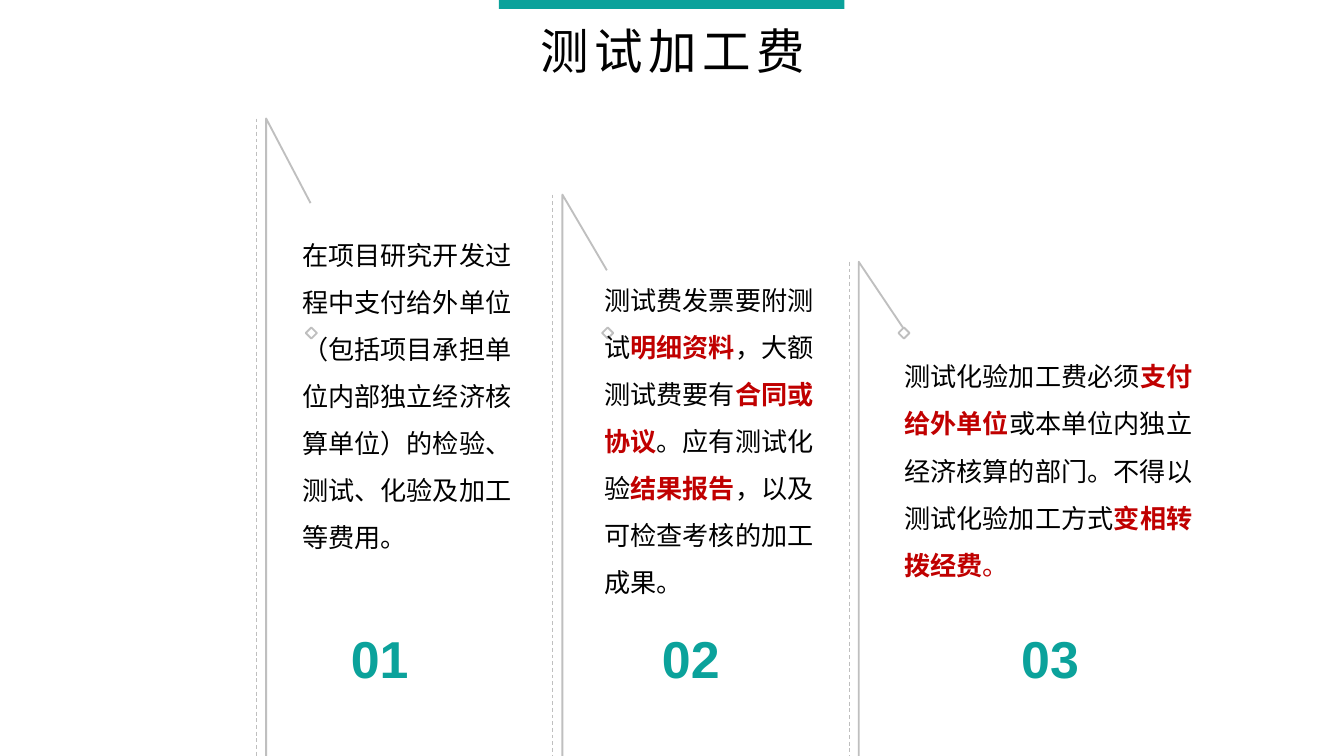
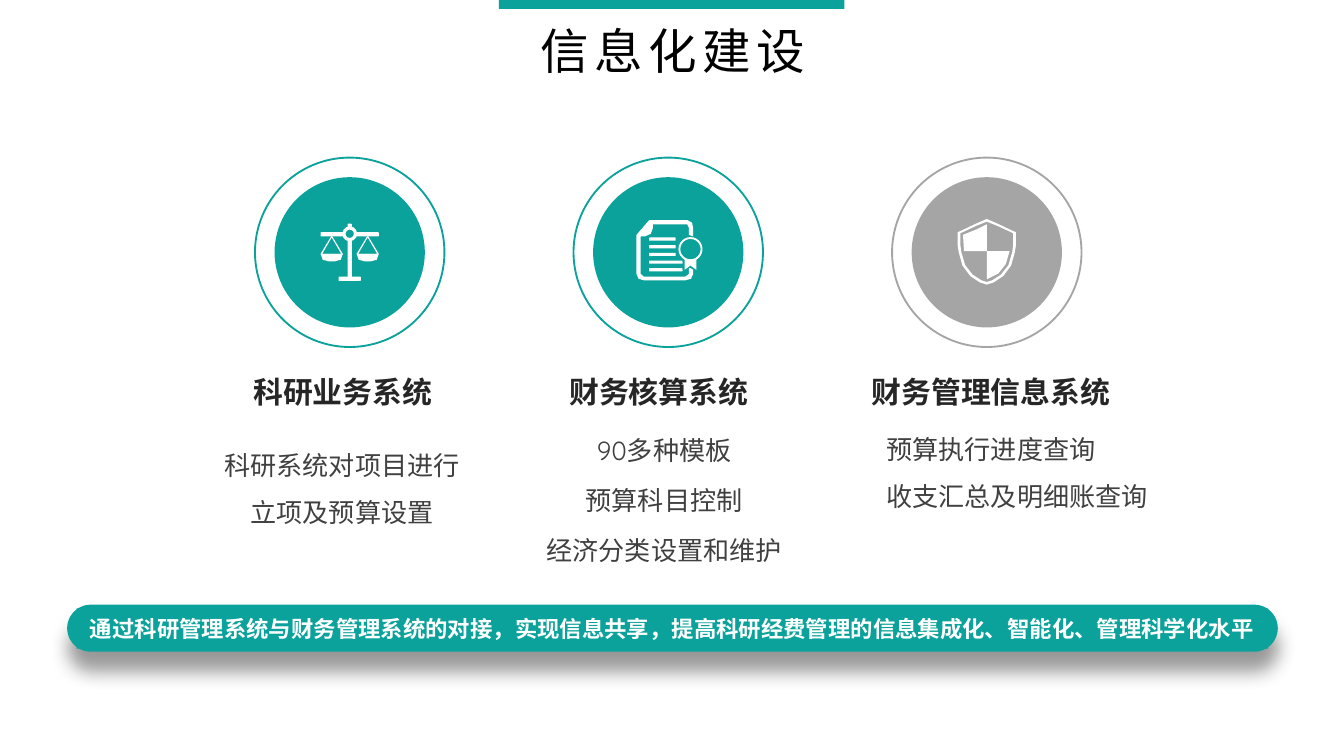
import lxml.etree
import pptx
import pptx.dml.color
import pptx.enum.dml
import pptx.enum.shapes
import pptx.enum.text
import pptx.oxml.ns
import pptx.util

Cm, Pt = pptx.util.Cm, pptx.util.Pt
MSO = pptx.enum.shapes.MSO_SHAPE
ALIGN = pptx.enum.text.PP_ALIGN
qn = pptx.oxml.ns.qn

COLORS = {"teal": "0BA29B", "gray": "A5A5A5", "rule": "BFBFBF", "red": "C00000", "black": "000000",
          "white": "FFFFFF", "heading": "262626", "body": "404040"}
SLIDE_W, SLIDE_H = 25.4, 14.29
CJK, LATIN, DIGITS = "Noto Sans CJK SC", "Quicksand", "Arial"


def rgb(name):
    """Return the named palette colour."""
    return pptx.dml.color.RGBColor.from_string(COLORS[name])


def paint(sp, fill=None, line=None, width=1):
    """Set the fill and line of a shape and drop its shadow."""
    sp.shadow.inherit = False
    if fill:
        sp.fill.solid()
        sp.fill.fore_color.rgb = rgb(fill)
    else:
        sp.fill.background()
    if line:
        sp.line.color.rgb = rgb(line)
        sp.line.width = Pt(width)
    else:
        sp.line.fill.background()
    return sp


def shape(slide, kind, box, **style):
    """Add a preset shape in a box given in centimetres."""
    return paint(slide.shapes.add_shape(kind, *map(Cm, box)), **style)


def disc(slide, cx, cy, radius, **style):
    """Add a circle around a centre."""
    return shape(slide, MSO.OVAL, (cx - radius, cy - radius, 2 * radius, 2 * radius), **style)


def outline(slide, cx, cy, contours, closed=True, **style):
    """Add a freeform whose points are hundredths of a centimetre from a centre."""
    builder = slide.shapes.build_freeform(*contours[0][0], scale=Cm(0.01))
    for i, points in enumerate(contours):
        if i:
            builder.move_to(*points[0])
        builder.add_line_segments(points[1:], close=closed)
    return paint(builder.convert_to_shape(Cm(cx), Cm(cy)), **style)


def style_run(r, size, color, font, bold=False, spacing=0):
    """Format one run, with the Chinese font for East Asian characters."""
    r.font.size, r.font.name, r.font.bold = Pt(size), font, bold
    r.font.color.rgb = rgb(color)
    rPr = r._r.get_or_add_rPr()
    rPr.find(qn("a:latin")).addnext(rPr.makeelement(qn("a:ea"), {"typeface": CJK}))
    if spacing:
        rPr.set("spc", str(spacing * 100))


def fill_text(sp, paragraphs, align=ALIGN.LEFT, leading=None, before=0, wrap=True, **font):
    """Write paragraphs into a shape; parts between asterisks are red and bold."""
    tf = sp.text_frame
    tf.word_wrap = wrap
    for i, words in enumerate(paragraphs):
        p = tf.add_paragraph() if i else tf.paragraphs[0]
        p.alignment = align
        if leading:
            p.line_spacing = leading
        if i and before:
            p.space_before = Pt(before)
        for j, part in enumerate(words.split("*")):
            r = p.add_run()
            r.text = part
            style_run(r, **(dict(font, color="red", bold=True) if j % 2 else font))


def text(slide, box, paragraphs, **style):
    """Add a text box in a box given in centimetres."""
    fill_text(slide.shapes.add_textbox(*map(Cm, box)), paragraphs, **style)


def title_band(slide, box, title):
    """Draw the top bar and the slide title below it."""
    x, y, w, h = box
    shape(slide, MSO.RECTANGLE, (x, y, w, 0.17), fill="teal")
    text(slide, (x + 0.2, y + 0.28, w - 0.36, h - 0.28), [title], align=ALIGN.CENTER,
         size=26, color="black", font=CJK, spacing=3)


def pillar(slide, box, number, number_dx, slant, body_at, body):
    """Draw a bent rule with its dashed twin, diamond, text and number."""
    x, y, w, h = box
    outline(slide, x, y, [[(0, round(h * 100)), (0, 0), (84, slant)]], closed=False, line="rule")
    c = slide.shapes.add_connector(pptx.enum.shapes.MSO_CONNECTOR.STRAIGHT,
                                   Cm(x - 0.18), Cm(y), Cm(x - 0.18), Cm(y + h))
    c.line.color.rgb = rgb("rule")
    c.line.width = Pt(0.5)
    c.line.dash_style = pptx.enum.dml.MSO_LINE.DASH
    lxml.etree.SubElement(c._element.spPr, qn("a:effectLst"))
    shape(slide, MSO.DIAMOND, (x + 0.75, y + h - 8.1, 0.21, 0.21), line="rule")
    text(slide, (x + number_dx, y + h - 2.81, 1.78, 1.68), [number], leading=1.2,
         size=27.8, color="teal", font=DIGITS, bold=True)
    dx, dy, height = body_at
    text(slide, (x + dx, y + dy, w, height), [body], leading=1.5, size=14, color="black", font=CJK)


def mirrored(points):
    """Complete a right half outline with its left half."""
    return points + [(-x, y) for x, y in reversed(points) if x]


def scales_icon(slide, cx, cy):
    """Draw a balance."""
    for x, y, w, h in ((-0.55, -0.38, 1.1, 0.08), (-0.04, -0.54, 0.08, 1.02), (-0.21, 0.46, 0.42, 0.08)):
        shape(slide, MSO.ROUNDED_RECTANGLE, (cx + x, cy + y, w, h), fill="white")
    disc(slide, cx, cy - 0.35, 0.11, fill="teal", line="white", width=1.7)
    pan = [(13, 3), (55, 3), (51, 14), (40, 17), (28, 17), (17, 14)]
    strings = [[(13, 3), (34, -32), (55, 3)], [(16, 3), (34, -28), (52, 3)]]
    for side in (-1, 1):
        for contours in ([pan], strings):
            outline(slide, cx, cy, [[(side * x, y) for x, y in c] for c in contours], fill="white")


def certificate_icon(slide, cx, cy):
    """Draw a page with text lines and a rosette."""
    page = [(-60, -33), (-36, -61), (36, -61), (45, -56), (47, -46), (47, -30), (39, -33), (39, -46),
            (36, -53), (-29, -53), (-29, -46), (-33, -35), (-44, -30), (-52, -30), (-52, 41), (-46, 46),
            (32, 46), (39, 41), (39, 30), (42, 30), (47, 33), (47, 41), (43, 50), (32, 53), (-46, 53),
            (-56, 50), (-60, 41)]
    ribbon = [(31, 10), (31, 33), (42, 25), (53, 33), (53, 10)]
    for points in (page, ribbon):
        outline(slide, cx, cy, [points], fill="white")
    for i in range(5):
        width = 0.5 if i < 3 else 0.63
        shape(slide, MSO.ROUNDED_RECTANGLE, (cx - 0.36, cy - 0.28 + 0.145 * i, width, 0.06), fill="white")
    disc(slide, cx + 0.42, cy - 0.06, 0.21, fill="teal", line="white")


def shield_icon(slide, cx, cy):
    """Draw a quartered shield."""
    rim = [(0, -63), (23, -53), (48, -41), (55, -38), (55, -13), (53, 0), (46, 25), (31, 45), (13, 57), (0, 61)]
    inner = [(0, -58), (20, -50), (50, -36), (50, -15), (48, 0), (41, 24), (27, 42), (10, 53), (0, 56)]
    upper = [(0, -53), (-20, -43), (-45, -33), (-43, -2), (0, -2)]
    lower = [(0, -2), (43, -2), (36, 22), (22, 40), (0, 51)]
    for contours in ([mirrored(rim), mirrored(inner)], [upper], [lower]):
        outline(slide, cx, cy, contours, fill="white")


def system_card(slide, box, color, icon, heading, heading_dx, detail_box, details, **detail_style):
    """Draw a ringed icon with a heading and details below."""
    x, y, w, _ = box
    cx, cy = x + w / 2, y + w / 2
    disc(slide, cx, cy, 1.42, fill=color)
    disc(slide, cx, cy, w / 2, line=color)
    icon(slide, cx, cy)
    width = 0.57 * len(heading) + 0.5
    text(slide, (cx + heading_dx - width / 2, y + 3.96, width, 0.94), [heading], align=ALIGN.CENTER,
         wrap=False, size=16, color="heading", font=LATIN, bold=True)
    dx, dy, dw, dh = detail_box
    text(slide, (x + dx, y + dy, dw, dh), details, size=14, color="body", font=LATIN, **detail_style)


def summary_bar(slide, box, words):
    """Draw the rounded bar with a soft shadow and its sentence."""
    x, y, w, h = box
    sp = shape(slide, MSO.ROUNDED_RECTANGLE, box, fill="teal")
    sp.adjustments[0] = 0.5
    shadow = lxml.etree.SubElement(sp._element.spPr.find(qn("a:effectLst")), qn("a:outerShdw"),
                                   blurRad=str(Pt(10)), dist=str(Pt(10)), dir="5400000",
                                   algn="t", rotWithShape="0")
    tint = lxml.etree.SubElement(shadow, qn("a:srgbClr"), val=COLORS["black"])
    lxml.etree.SubElement(tint, qn("a:alpha"), val="40000")
    label = shape(slide, MSO.RECTANGLE, (x + 0.18, y + 0.07, w - 0.36, h - 0.13), fill="teal")
    label.text_frame.vertical_anchor = pptx.enum.text.MSO_ANCHOR.MIDDLE
    fill_text(label, [words], wrap=False, size=12, color="white", font=CJK, bold=True)


def new_slide(prs, title):
    """Add a blank slide with the shared title band."""
    slide = prs.slides.add_slide(prs.slide_layouts[6])
    title_band(slide, (9.43, 0, 6.53, 1.65), title)
    return slide


def testing_fee_slide(prs):
    """Build the slide on testing and processing fees."""
    slide = new_slide(prs, "测试加工费")
    pillars = [
        (2.24, 4.88, "01", 1.35, 160, (0.43, 1.87, 6.53),
         "在项目研究开发过程中支付给外单位（包括项目承担单位内部独立经济核算单位）的检验、测试、化验及加工等费用。"),
        (3.68, 4.88, "02", 1.63, 143, (0.54, 1.27, 6.53),
         "测试费发票要附测试*明细资料*，大额测试费要有*合同或协议*。应有测试化验*结果报告*，以及可检查考核的加工成果。"),
        (4.95, 5.97, "03", 2.82, 125, (0.61, 1.45, 4.75),
         "测试化验加工费必须*支付给外单位*或本单位内独立经济核算的部门。不得以测试化验加工方式*变相转拨经费*。"),
    ]
    for i, (top, width, *parts) in enumerate(pillars):
        pillar(slide, (5.03 + 5.6 * i, top, width, SLIDE_H - top), *parts)
    last = slide.shapes[-1].text_frame.paragraphs[0].runs[-1]
    last.font.color.rgb = rgb("red")


def information_slide(prs):
    """Build the slide on information systems."""
    slide = new_slide(prs, "信息化建设")
    cards = [
        ("teal", scales_icon, "科研业务系统", -0.13, (-1.02, 5.1, 5.33, 2.39),
         ["科研系统对项目进行立项及预算设置"], dict(align=ALIGN.CENTER, leading=1.5)),
        ("teal", certificate_icon, "财务核算系统", -0.18, (-0.95, 5.1, 5.33, 2.39),
         ["90多种模板", "预算科目控制", "经济分类设置和维护"], dict(align=ALIGN.CENTER, before=10)),
        ("gray", shield_icon, "财务管理信息系统", 0.08, (-0.36, 4.79, 8.41, 2.1),
         ["预算执行进度查询", "收支汇总及明细账查询"], dict(leading=1.5)),
    ]
    for i, (*parts, style) in enumerate(cards):
        system_card(slide, (4.82 + 6.02 * i, 2.98, 3.58, 7.5), *parts, **style)
    summary_bar(slide, (1.27, 11.43, 22.88, 0.89),
                "通过科研管理系统与财务管理系统的对接，实现信息共享，提高科研经费管理的信息集成化、智能化、管理科学化水平")


def main():
    """Build and save the presentation."""
    prs = pptx.Presentation()
    prs.slide_width, prs.slide_height = Cm(SLIDE_W), Cm(SLIDE_H)
    testing_fee_slide(prs)
    information_slide(prs)
    prs.save("out.pptx")


if __name__ == "__main__":
    main()
